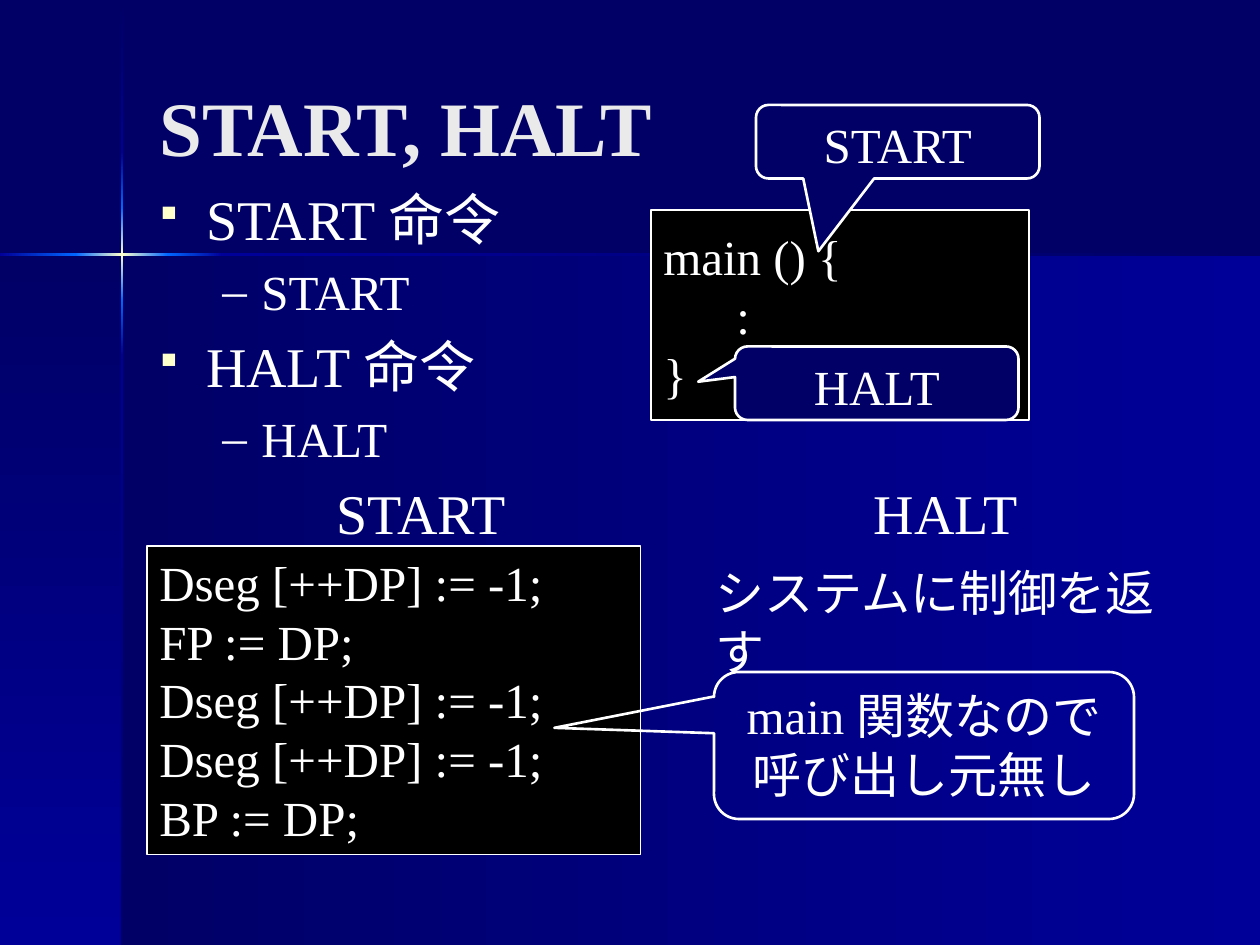
from copy import deepcopy
from lxml import etree
from pptx import Presentation
from pptx.dml.color import RGBColor
from pptx.enum.shapes import MSO_SHAPE
from pptx.enum.text import MSO_ANCHOR, PP_ALIGN
from pptx.oxml.ns import qn
from pptx.util import Inches, Pt

NAVY = RGBColor(0x00, 0x00, 0x66)
BLUE = RGBColor(0x00, 0x00, 0x99)
GLOW = RGBColor(0x00, 0x66, 0xFF)
CREAM = RGBColor(0xFF, 0xFF, 0xCC)
PALE = RGBColor(0xEA, 0xEA, 0xEA)
WHITE = RGBColor(0xFF, 0xFF, 0xFF)
BLACK = RGBColor(0x00, 0x00, 0x00)
FONT = "Times New Roman"

# The slide is a grid of 120 columns and 90 rows
CELL = Inches(1) / 12
COLS, ROWS = 120, 90

deck = Presentation()
deck.slide_width, deck.slide_height = Inches(10), Inches(7.5)
slide = deck.slides.add_slide(deck.slide_layouts[6])
slide.background.fill.solid()
slide.background.fill.fore_color.rgb = NAVY


def add_box(area, kind=None):
    place = [round(n * CELL) for n in area]
    if kind is None:
        return slide.shapes.add_textbox(*place)
    shape = slide.shapes.add_shape(kind, *place)
    shape.shadow.inherit = False
    return shape


def set_text(shape, lines, size, color=WHITE, align=PP_ALIGN.LEFT,
             anchor=MSO_ANCHOR.TOP, bold=False, wrap=True):
    frame = shape.text_frame
    frame.text = "\n".join(lines)
    frame.word_wrap = wrap
    frame.vertical_anchor = anchor
    for para in frame.paragraphs:
        para.alignment = align
        for run in para.runs:
            run.font.name = FONT
            run.font.size = Pt(size)
            run.font.bold = bold
            run.font.color.rgb = color
    return frame


# Backdrop: two panels, then a glowing cross of thin bars
EDGE, SKY, THIN = 11.64, 24.24, 0.24
bars = [((EDGE, SKY, COLS - EDGE, ROWS - SKY), (NAVY, BLUE), 0),
        ((0, SKY, EDGE, ROWS - SKY), (NAVY, BLUE), 270)]
fades = [(NAVY, BLUE), (BLUE, GLOW), (GLOW, CREAM, GLOW),
         (GLOW, BLUE), (BLUE, NAVY)]
downs = [0, 14.5, 19.8, 28.6, 33.8, ROWS]
rights = [0, 7.2, 16, 21.2, COLS]
for top, end, fade in zip(downs, downs[1:], fades):
    bars.append(((EDGE - THIN / 2, top, THIN, end - top), fade, 270))
for left, end, fade in zip(rights, rights[1:], fades[1:]):
    bars.append(((left, SKY - THIN / 2, end - left, THIN), fade, 0))

for area, fade, angle in bars:
    bar = add_box(area, MSO_SHAPE.RECTANGLE)
    bar.line.fill.background()
    bar.fill.gradient()
    bar.fill.gradient_angle = angle
    stops = bar._element.spPr.find(".//" + qn("a:gsLst"))
    if len(fade) == 3:
        stops.insert(1, deepcopy(stops[0]))
    for i, (stop, color) in enumerate(zip(bar.fill.gradient_stops, fade)):
        stop.color.rgb = color
        stop.position = i / (len(fade) - 1)

# Title
set_text(add_box((14, 4, 99, 13)), ["START, HALT"], 44, PALE,
         anchor=MSO_ANCHOR.BOTTOM, bold=True)

# Bullet list: commands, each with one sub-item
body = set_text(add_box((14, 17, 98, 32)),
                ["START 命令", "START", "HALT 命令", "HALT"], 32)
for i, para in enumerate(body.paragraphs):
    sub = i % 2
    size = 28 if sub else 32
    para.runs[0].font.size = Pt(size)
    para.space_before = Pt(size * 0.2)
    para.level = sub
    props = para._p.get_or_add_pPr()
    props.set("marL", str(Inches(0.81 if sub else 0.37)))
    props.set("indent", str(Inches(-0.31 if sub else -0.37)))
    tint = etree.SubElement(props, qn("a:buClr"))
    etree.SubElement(tint, qn("a:srgbClr")).set(
        "val", str(WHITE if sub else CREAM))
    etree.SubElement(props, qn("a:buSzPct")).set(
        "val", "100000" if sub else "75000")
    etree.SubElement(props, qn("a:buFont")).set(
        "typeface", FONT if sub else "Wingdings")
    etree.SubElement(props, qn("a:buChar")).set("char", "–" if sub else "§")

# Code for START
code = add_box((14, 52, 47, 29.4), MSO_SHAPE.RECTANGLE)
code.fill.solid()
code.fill.fore_color.rgb = BLACK
code.line.color.rgb = WHITE
code.line.width = Pt(0.75)
push = "Dseg [++DP] := -1;"
set_text(code, [push, "FP := DP;", push, push, "BP := DP;"], 28)

# Column heads and the note on HALT
for area, word in [((30.5, 45, 19.2, 7.5), "START"),
                   ((81.8, 45, 16.6, 7.5), "HALT")]:
    set_text(add_box(area), [word], 32, align=PP_ALIGN.CENTER, wrap=False)
set_text(add_box((67, 53, 46.5, 6.8)), ["システムに制御を返す"], 28)

# Sample main function
main = add_box((62, 20, 36, 20), MSO_SHAPE.RECTANGLE)
main.fill.solid()
main.fill.fore_color.rgb = BLACK
main.line.color.rgb = WHITE
main.line.width = Pt(1.5)
frame = set_text(main, ["main () {", ":", "}"], 28,
                 anchor=MSO_ANCHOR.MIDDLE, wrap=False)
frame.paragraphs[1]._p.get_or_add_pPr().set("marL", str(Inches(0.58)))

# Callouts: area, tip, fill, lines
calls = [((68, 64, 40, 14), (-0.88, -0.12), None,
          ["main 関数なので", "呼び出し元無し"]),
         ((72, 10, 27, 7), (-0.28, 1.49), NAVY, ["START"]),
         ((70, 33, 27, 7), (-0.63, -0.02), NAVY, ["HALT"])]
for area, tip, fill, lines in calls:
    call = add_box(area, MSO_SHAPE.ROUNDED_RECTANGULAR_CALLOUT)
    call.adjustments[0], call.adjustments[1] = tip
    call.adjustments[2] = 0.17
    if fill is None:
        call.fill.background()
    else:
        call.fill.solid()
        call.fill.fore_color.rgb = fill
    call.line.color.rgb = WHITE
    call.line.width = Pt(1.5)
    set_text(call, lines, 28, align=PP_ALIGN.CENTER)

deck.save("out.pptx")
